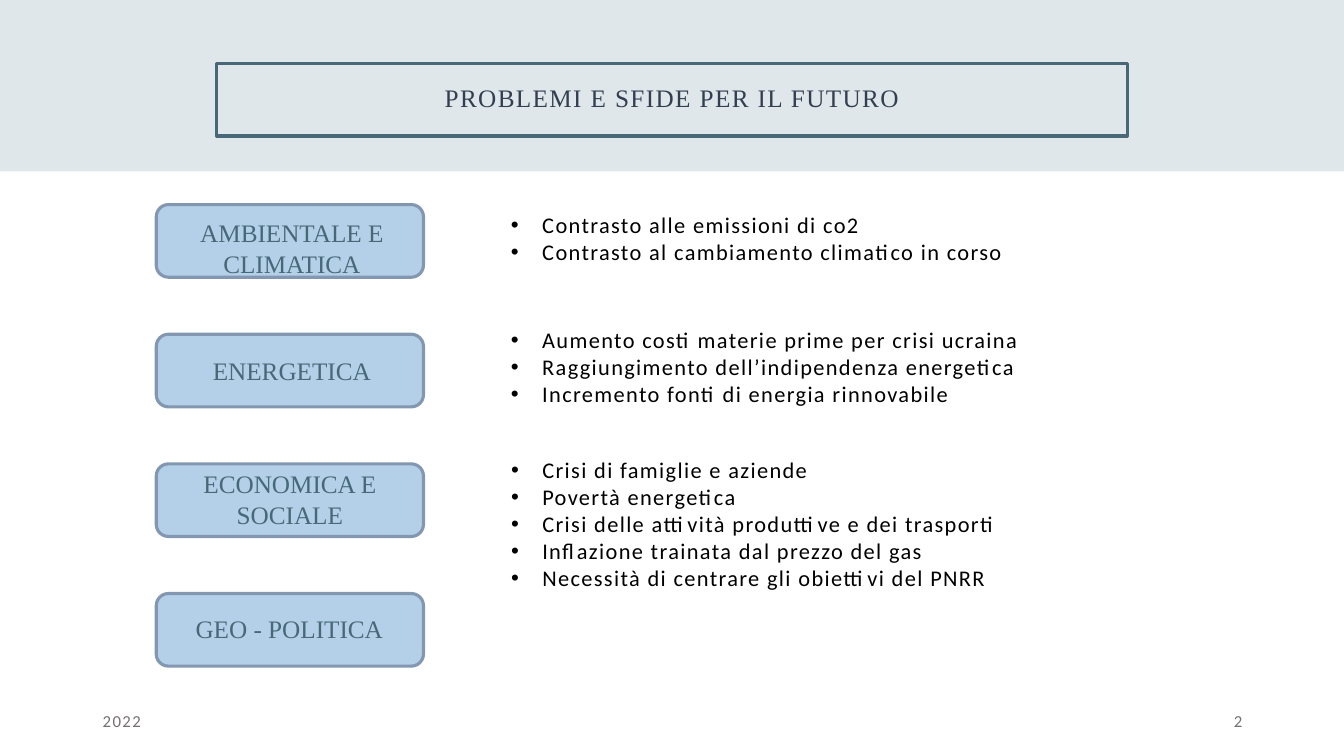
from lxml import etree
from pptx import Presentation
from pptx.dml.color import RGBColor
from pptx.enum.shapes import MSO_SHAPE
from pptx.enum.text import MSO_ANCHOR, PP_ALIGN
from pptx.oxml.ns import qn
from pptx.util import Inches, Pt

COLORS = {
    "band": "D7E2E7",
    "card": "B4D0E9",
    "card_line": "8497B0",
    "teal": "476977",
    "title": "333F50",
    "body": "000000",
    "footer": "767171",
}

deck = Presentation()
deck.slide_width, deck.slide_height = Inches(13.33), Inches(7.5)
page = deck.slides.add_slide(deck.slide_layouts[6])


def add_box(kind, left, top, width, height, fill=None, line=None):
    box = page.shapes.add_shape(
        kind, Inches(left), Inches(top), Inches(width), Inches(height))
    box.shadow.inherit = False
    if fill:
        box.fill.solid()
        box.fill.fore_color.rgb = RGBColor.from_string(COLORS[fill])
    else:
        box.fill.background()
    if line:
        box.line.color.rgb = RGBColor.from_string(COLORS[line])
        box.line.width = Pt(2.25)
    else:
        box.line.fill.background()
    return box


def add_text(lines, left, top, width, height, size=16, font="Calibri", color="body",
             align=PP_ALIGN.LEFT, anchor=MSO_ANCHOR.TOP, tracking=1,
             line_spacing=1.0, bullets=False):
    """Add a text box with one paragraph per line; tracking is in points."""
    box = page.shapes.add_textbox(
        Inches(left), Inches(top), Inches(width), Inches(height))
    frame = box.text_frame
    frame.word_wrap = True
    frame.vertical_anchor = anchor
    for index, line in enumerate(lines):
        para = frame.add_paragraph() if index else frame.paragraphs[0]
        para.alignment = align
        para.line_spacing = line_spacing
        span = para.add_run()
        span.text = line
        span.font.size = Pt(size)
        span.font.name = font
        span.font.color.rgb = RGBColor.from_string(COLORS[color])
        if tracking:
            span.font._element.set("spc", str(tracking * 100))
        if bullets:
            properties = para._p.get_or_add_pPr()
            properties.set("marL", str(Inches(0.31)))
            properties.set("indent", str(-Inches(0.31)))
            etree.SubElement(properties, qn("a:buFont")).set("typeface", "Arial")
            etree.SubElement(properties, qn("a:buChar")).set("char", "•")


# Header band and framed title
band = add_box(MSO_SHAPE.RECTANGLE, 0, 0, 13.33, 1.7, fill="band")
band_color = band.fill._xPr.find(qn("a:solidFill"))[0]
etree.SubElement(band_color, qn("a:alpha")).set("val", "80000")

title_area = (2.15, 0.63, 9.03, 0.72)
add_box(MSO_SHAPE.RECTANGLE, *title_area, line="teal")
add_text(["PROBLEMI E SFIDE PER IL FUTURO"], *title_area, size=18,
         font="Times New Roman", color="title", align=PP_ALIGN.CENTER,
         anchor=MSO_ANCHOR.MIDDLE, line_spacing=0.9)

# Challenge cards: label, then left, top, width and height of its text
challenges = [
    ("AMBIENTALE E CLIMATICA", 1.85, 2.11, 2.09, 0.71),
    ("ENERGETICA", 1.85, 3.48, 2.09, 0.4),
    ("ECONOMICA E SOCIALE", 1.83, 4.6, 2.09, 0.71),
    ("GEO - POLITICA", 1.69, 6.04, 2.36, 0.4),
]
for row, (label, *area) in enumerate(challenges):
    add_box(MSO_SHAPE.ROUNDED_RECTANGLE, 1.55, 2.03 + row * 1.286, 2.65, 0.72,
            fill="card", line="card_line")
    add_text([label], *area, size=18, font="Times New Roman", color="teal",
             align=PP_ALIGN.CENTER, tracking=0)

# Bulleted details: top, width, height and lines
details = [
    (2.05, 6.56, 0.66, [
        "Contrasto alle emissioni di co2",
        "Contrasto al cambiamento climatico in corso",
    ]),
    (3.19, 6.56, 0.83, [
        "Aumento costi materie prime per crisi ucraina",
        "Raggiungimento dell’indipendenza energetica",
        "Incremento fonti di energia rinnovabile",
    ]),
    (4.48, 7.35, 1.35, [
        "Crisi di famiglie e aziende",
        "Povertà energetica",
        "Crisi delle attività produttive e dei trasporti",
        "Inflazione trainata dal prezzo del gas",
        "Necessità di centrare gli obiettivi del PNRR",
    ]),
]
for top, width, height, lines in details:
    add_text(lines, 4.97, top, width, height, bullets=True)

# Footer
for text, left, align in [("2022", 0.92, PP_ALIGN.LEFT), ("2", 9.42, PP_ALIGN.RIGHT)]:
    add_text([text], left, 6.95, 3, 0.4, size=12, color="footer", align=align,
             anchor=MSO_ANCHOR.MIDDLE)

deck.save("out.pptx")
